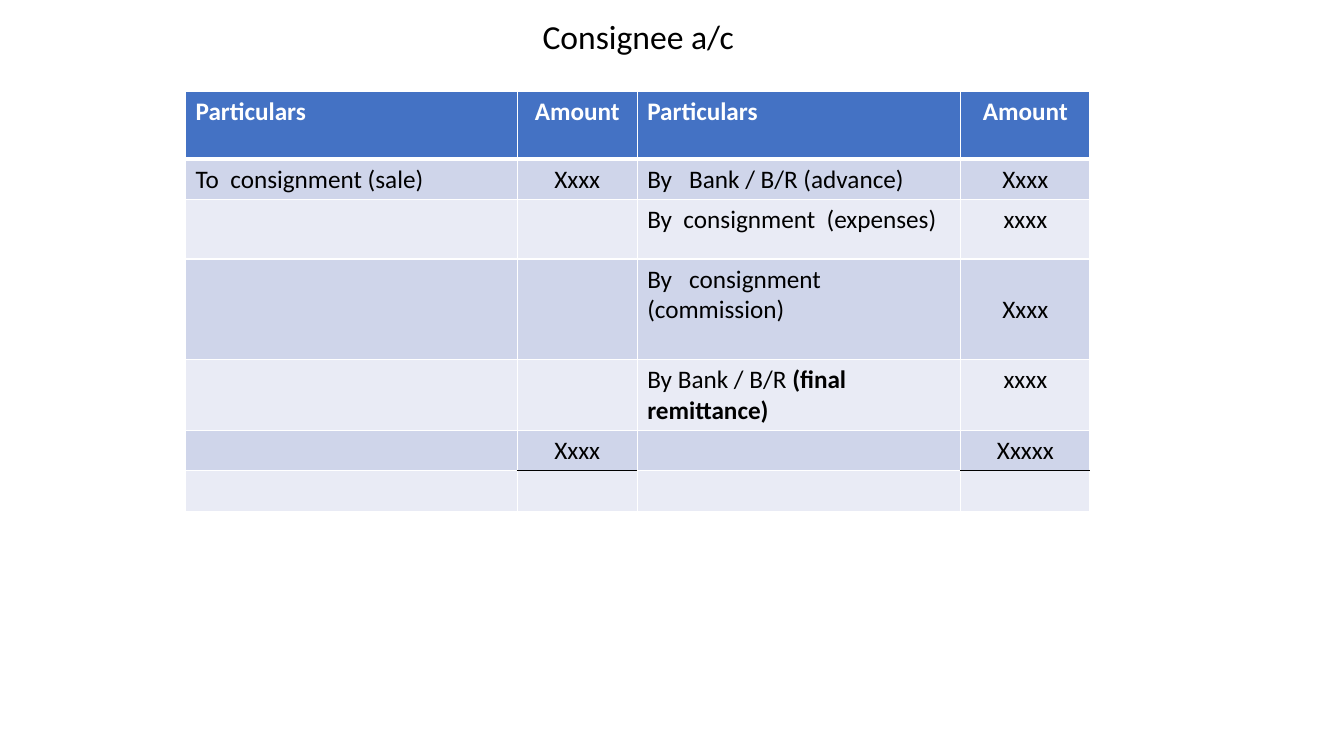
from lxml import etree
from pptx import Presentation
from pptx.dml.color import RGBColor
from pptx.enum.text import PP_ALIGN
from pptx.oxml.ns import qn
from pptx.util import Pt

LEFT, CENTER = PP_ALIGN.LEFT, PP_ALIGN.CENTER
PX = 9144  # 100 px to the inch
FONT = "Calibri"
COLORS = {
    "text": "000000",
    "white": "FFFFFF",
    "header": "4472C4",
    "odd": "CFD5EA",
    "even": "E9EBF5",
}

COL_WIDTHS = [329, 119, 321, 128]
ROW_HEIGHTS = [67, 40, 59, 100, 69, 40, 40]
AMOUNT_COLS = (1, 3)
COMMISSION_ROW, TOTAL_ROW = 3, 5
# Each cell is a plain part, optionally followed by a bold part
ENTRIES = [
    [("Particulars",), ("Amount",), ("Particulars",), ("Amount",)],
    [("To  consignment (sale)",), ("Xxxx",), ("By   Bank / B/R (advance)",), ("Xxxx",)],
    [(), (), ("By  consignment  (expenses)",), ("xxxx",)],
    [(), (), ("By   consignment  (commission)",), ("Xxxx",)],
    [(), (), ("By Bank / B/R ", "(final remittance)"), ("xxxx",)],
    [(), ("Xxxx",), (), ("Xxxxx",)],
    [(), (), (), ()],
]


def px(n):
    return n * PX


def add_run(p, text, size, color="text", bold=False):
    r = p.add_run()
    r.text = text
    for name, value in {"name": FONT, "size": Pt(size), "bold": bold}.items():
        setattr(r.font, name, value)
    r.font.color.rgb = RGBColor.from_string(COLORS[color])


def set_border(cell, side, color, width):
    tcPr = cell._tc.get_or_add_tcPr()
    ln = etree.SubElement(tcPr, qn(f"a:ln{side}"), w=str(Pt(width)))
    fill = etree.SubElement(ln, qn("a:solidFill"))
    etree.SubElement(fill, qn("a:srgbClr"), val=COLORS[color])


def add_title(s, x, y, w, h):
    tf = s.shapes.add_textbox(px(x), px(y), px(w), px(h)).text_frame
    tf.word_wrap = True
    p = tf.paragraphs[0]
    p.alignment = CENTER
    add_run(p, "Consignee a/c", 24)


def format_cell(cell, row, col):
    # Borders: thick rule under the header, black rule under the totals
    is_amount = col in AMOUNT_COLS
    for side in "LRTB":
        row_above = {"T": row - 1, "B": row}.get(side)
        color = "text" if is_amount and row_above == TOTAL_ROW else "white"
        set_border(cell, side, color, 3 if row_above == 0 else 1)

    # Banded fill
    fill = "header" if row == 0 else "odd" if row % 2 else "even"
    cell.fill.solid()
    cell.fill.fore_color.rgb = RGBColor.from_string(COLORS[fill])

    # Text
    if is_amount and row == COMMISSION_ROW:
        cell.margin_top = px(35)  # level with the second line of the entry
    p = cell.text_frame.paragraphs[0]
    p.alignment = CENTER if is_amount else LEFT
    for i, text in enumerate(ENTRIES[row][col]):
        add_run(p, text, 18, "white" if row == 0 else "text", row == 0 or i == 1)


def add_account(s, x, y):
    table = s.shapes.add_table(
        len(ROW_HEIGHTS), len(COL_WIDTHS),
        px(x), px(y), px(sum(COL_WIDTHS)), px(sum(ROW_HEIGHTS)),
    ).table
    for col, width in enumerate(COL_WIDTHS):
        table.columns[col].width = px(width)
    for row, height in enumerate(ROW_HEIGHTS):
        table.rows[row].height = px(height)
        for col in range(len(COL_WIDTHS)):
            format_cell(table.cell(row, col), row, col)


def main():
    prs = Presentation()
    prs.slide_width, prs.slide_height = px(1333), px(750)
    s = prs.slides.add_slide(prs.slide_layouts[6])
    add_title(s, 96, 11, 1074, 50)
    add_account(s, 184, 91)
    prs.save("out.pptx")


if __name__ == "__main__":
    main()
